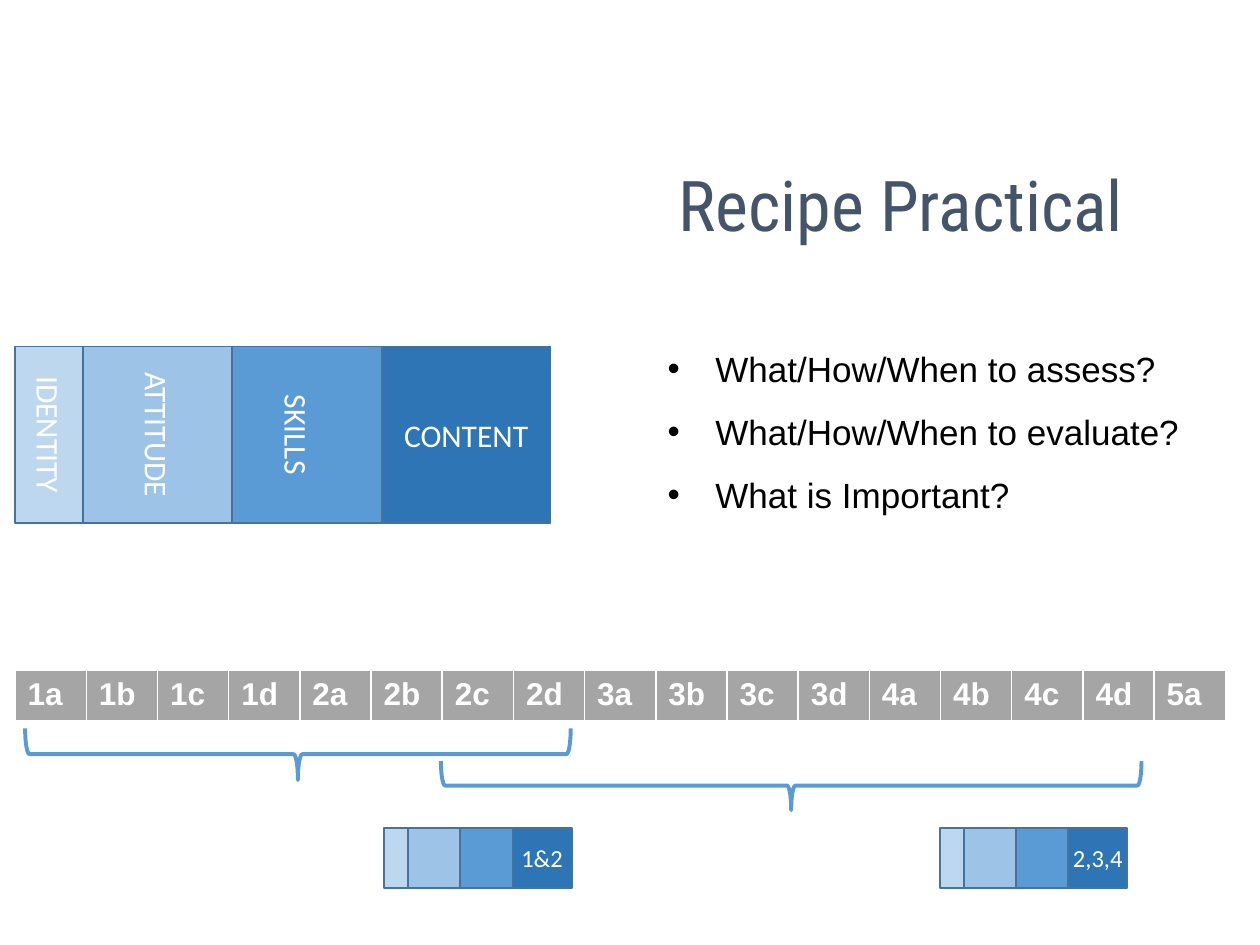
"""Build the Recipe Practical slide: layer bars, a term table, braces and questions."""
from pptx import Presentation
from pptx.dml.color import RGBColor
from pptx.enum.shapes import MSO_SHAPE
from pptx.enum.text import MSO_ANCHOR, PP_ALIGN
from pptx.oxml import parse_xml
from pptx.oxml.ns import nsdecls
from pptx.util import Inches, Pt

COLORS = {
    "content": "2E75B6", "skills": "5B9BD5", "attitude": "9DC3E6",
    "identity": "BDD7EE", "edge": "43739E", "title": "44546A",
    "term": "A5A5A5", "white": "FFFFFF", "black": "000000",
}
TITLE = "Recipe Practical"
QUESTIONS = ["What/How/When to assess?", "What/How/When to evaluate?", "What is Important?"]
TERMS = [f"{year}{part}" for year in range(1, 5) for part in "abcd"] + ["5a"]
LAYERS = [("skills", 1.57, 1.34), ("content", 2.91, 1.34),
          ("attitude", 0.54, 1.18), ("identity", 0, 0.54)]
BARS = [
    (0.12, 2.75, 1.4, 1, 18, {name: name.upper() for name, _, _ in LAYERS}),
    (3.05, 6.57, 0.48, 0.35, 14, {"content": "1&2"}),
    (7.46, 6.57, 0.48, 0.35, 14, {"content": "2,3,4"}),
]
BRACES = [(0.2, 5.78, 4.33, 0.41), (3.5, 6.04, 5.56, 0.39)]


def color(name):
    return RGBColor.from_string(COLORS[name])


def style(par, face, size, tint, bold=False):
    for run in par.runs:
        font = run.font
        font.name, font.size, font.bold = face, Pt(size), bold
        font.color.rgb = color(tint)


def add_bar(slide, left, top, height, scale, size, labels):
    group = slide.shapes.add_group_shape()
    for name, start, width in LAYERS:
        box = group.shapes.add_shape(
            MSO_SHAPE.RECTANGLE, Inches(left + start * scale), Inches(top),
            Inches(width * scale), Inches(height))
        box.shadow.inherit = False
        box.fill.solid()
        box.fill.fore_color.rgb = color(name)
        box.line.color.rgb = color("edge")
        box.line.width = Pt(1)
        if name in labels:
            frame = box.text_frame
            frame.text = labels[name]
            frame.word_wrap = scale == 1
            frame.vertical_anchor = MSO_ANCHOR.MIDDLE
            par = frame.paragraphs[0]
            par.alignment = PP_ALIGN.CENTER
            style(par, "Calibri", size, "white")
            if name != "content":
                frame._txBody.bodyPr.set("vert", "vert")


def add_brace(slide, left, top, span, depth):
    shift = (span - depth) / 2
    brace = slide.shapes.add_shape(
        MSO_SHAPE.LEFT_BRACE, Inches(left + shift), Inches(top - shift),
        Inches(depth), Inches(span))
    brace.rotation = 270
    brace.shadow.inherit = False
    brace.fill.background()
    brace.line.color.rgb = color("skills")
    brace.line.width = Pt(2.25)


def add_terms(slide):
    table = slide.shapes.add_table(
        1, len(TERMS), Inches(0.12), Inches(5.32), Inches(9.61), Inches(0.41)).table
    for cell, term in zip(table.rows[0].cells, TERMS):
        cell.text = term
        style(cell.text_frame.paragraphs[0], "Arial", 18, "white", True)
        props = cell._tc.get_or_add_tcPr()
        for side, width in (("L", 1), ("R", 1), ("T", 1), ("B", 3)):
            props.append(parse_xml(
                f'<a:ln{side} {nsdecls("a")} w="{Pt(width)}"><a:solidFill>'
                f'<a:srgbClr val="{COLORS["white"]}"/></a:solidFill></a:ln{side}>'))
        cell.fill.solid()
        cell.fill.fore_color.rgb = color("term")


def add_text(slide, left, top, width, height, lines):
    box = slide.shapes.add_textbox(Inches(left), Inches(top), Inches(width), Inches(height))
    frame = box.text_frame
    frame.word_wrap = True
    frame.text = "\n".join(lines)
    return frame.paragraphs


def add_questions(slide):
    for par in add_text(slide, 4.7, 2.71, 5.3, 1.45, QUESTIONS):
        par.level = 1
        props = par._p.get_or_add_pPr()
        props.set("marL", str(Inches(0.88)))
        props.set("indent", str(Inches(-0.38)))
        props.append(parse_xml(f'<a:buFont {nsdecls("a")} typeface="Arial"/>'))
        props.append(parse_xml(f'<a:buChar {nsdecls("a")} char="•"/>'))
        par.space_after = Pt(12)
        style(par, "Arial", 20, "black")


def main():
    deck = Presentation()
    deck.slide_width, deck.slide_height = Inches(10), Inches(7.5)
    slide = deck.slides.add_slide(deck.slide_layouts[6])
    head = add_text(slide, 4.16, 1.23, 5.98, 1.25, [TITLE])[0]
    head.alignment = PP_ALIGN.CENTER
    style(head, "Roboto Condensed", 40, "title")
    add_terms(slide)
    for brace in BRACES:
        add_brace(slide, *brace)
    for bar in BARS:
        add_bar(slide, *bar)
    add_questions(slide)
    deck.save("out.pptx")


if __name__ == "__main__":
    main()
